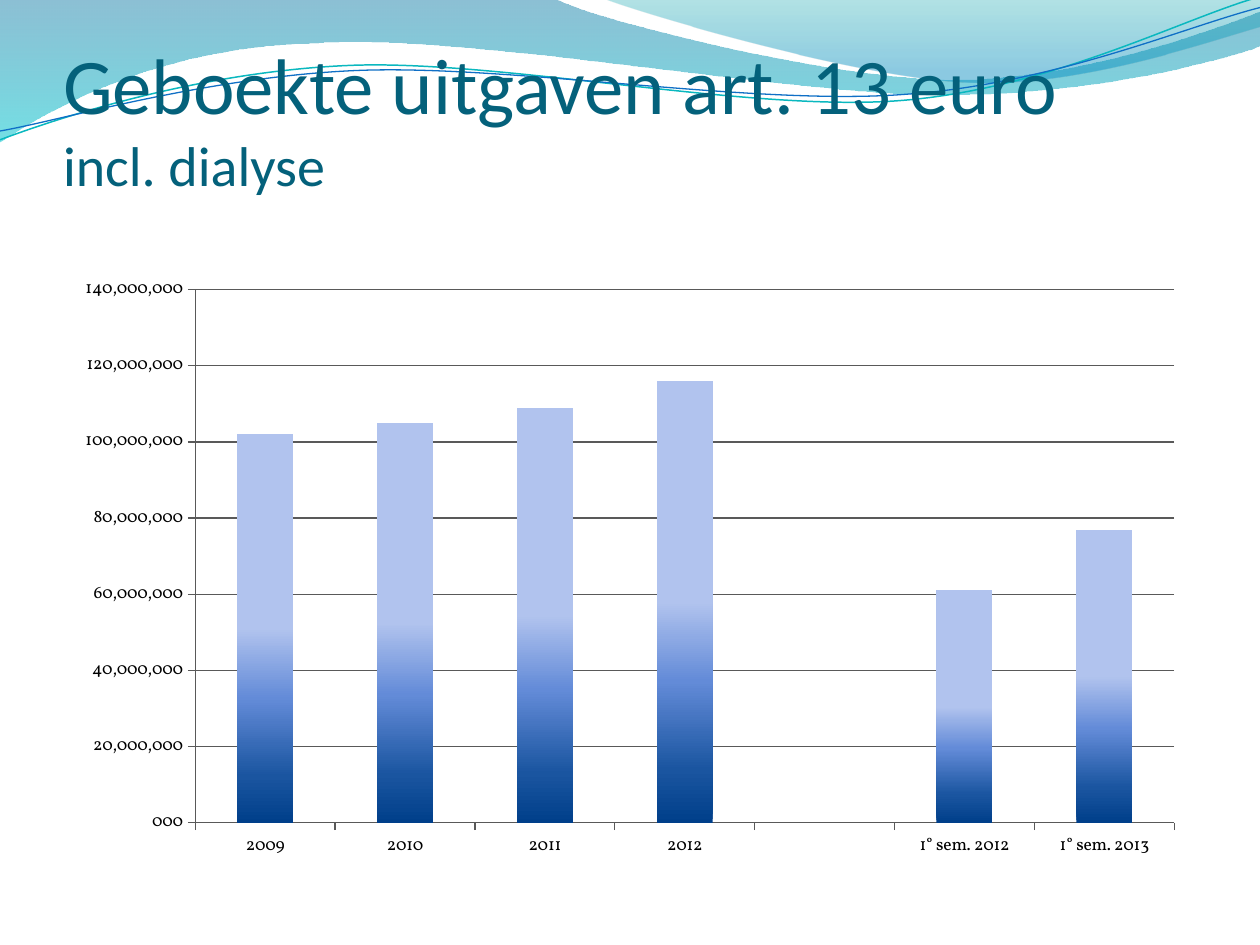
from lxml import etree
from pptx import Presentation
from pptx.chart.data import CategoryChartData
from pptx.dml.color import RGBColor
from pptx.enum.chart import XL_CHART_TYPE as ChartType, XL_TICK_MARK as Tick
from pptx.enum.text import MSO_ANCHOR as Anchor, PP_ALIGN as Align
from pptx.oxml import parse_xml
from pptx.oxml.ns import nsdecls, qn
from pptx.util import Inches, Pt

THEME = {
    "title": RGBColor.from_string("04617B"),
    "axis": RGBColor.from_string("595959"),
    "label": RGBColor.from_string("000000"),
    "title_font": "Calibri", "chart_font": "Vollkorn",
    "title_size": Pt(45), "subtitle_size": Pt(32), "label_size": Pt(10),
    # gradient stops: position %, colour, opacity %
    "broad_wave": [(0, "0074A1", 45), (100, "00C6CF", 55)],
    "right_wave": [(0, "00A1A9", 30), (80, "008BBF", 45)],
    "bar": [(0, "003F8A", 100), (12, "1A55A0", 100), (32, "638BD8", 100),
            (50, "B1C3EE", 100), (100, "B1C3EE", 100)],
    "thin_waves": [("0AB8BF", 0.85), ("0F6FC6", 0.75)],
}
UNITS = 100  # outline units per inch


def add_wave(shapes, start, segments, closed):
    """Draw a freeform; a segment is a line end (2 numbers) or a Bézier (6)."""
    builder = shapes.build_freeform(start[0] * UNITS, start[1] * UNITS,
                                    scale=Inches(1) / UNITS)
    for i, segment in enumerate(segments):
        scaled = [value * UNITS for value in segment]
        builder.add_line_segments(list(zip(scaled[::2], scaled[1::2])),
                                  close=closed and i == len(segments) - 1)
    wave = builder.convert_to_shape()
    lines = iter(list(wave._element.iter(qn("a:lnTo"))))
    for segment in segments:
        first = next(lines)
        if len(segment) == 6:
            first.tag = qn("a:cubicBezTo")
            for _ in range(2):
                line = next(lines)
                first.append(line[0])
                line.getparent().remove(line)
    wave.shadow.inherit = False
    wave.fill.background()
    return wave


def set_gradient(properties, stops, angle):
    """Replace the empty fill in the shape properties by a linear gradient."""
    stop_xml = "".join(
        f'<a:gs pos="{pos * 1000}"><a:srgbClr val="{color}">'
        f'<a:alpha val="{alpha * 1000}"/></a:srgbClr></a:gs>'
        for pos, color, alpha in stops)
    gradient = parse_xml(
        f'<a:gradFill {nsdecls("a")} rotWithShape="1"><a:gsLst>{stop_xml}</a:gsLst>'
        f'<a:lin ang="{angle * 60000}" scaled="0"/></a:gradFill>')
    properties.replace(properties.find(qn("a:noFill")), gradient)


prs = Presentation()
prs.slide_width, prs.slide_height = Inches(10), Inches(7.5)
slide = prs.slides.add_slide(prs.slide_layouts[5])
shapes = slide.shapes

# Wave decoration along the top
filled_waves = [
    ((0, 0), [(4.4, -0.01), (4.76, 0.17, 6.64, 0.63, 7.58, 0.63),
              (8.53, 0.63, 9.58, 0.26, 10, 0.09), (10.01, 0.36),
              (9.83, 0.44, 8.7, 0.76, 7.46, 0.75),
              (6.22, 0.75, 3.82, 0.28, 2.57, 0.34),
              (1.29, 0.36, 0.46, 0.83, -0.01, 1.13)], THEME["broad_wave"]),
    ((4.79, -0.01), [(5.09, 0.11, 6.82, 0.62, 7.69, 0.65),
                     (8.56, 0.69, 9.61, 0.32, 10, 0.21), (10, 0)],
     THEME["right_wave"]),
]
for start, segments, stops in filled_waves:
    wave = add_wave(shapes, start, segments, closed=True)
    wave.line.fill.background()
    set_gradient(wave._element.spPr, stops, 90)

thin_waves = [
    ((0, 1.11), [(0.48, 0.93, 1.58, 0.57, 2.77, 0.52),
                 (3.95, 0.47, 5.93, 0.89, 7.13, 0.8),
                 (8.33, 0.71, 9.38, 0.15, 9.98, -0.02)]),
    ((0, 1.04), [(0.47, 0.96, 1.64, 0.61, 2.83, 0.56),
                 (4.03, 0.51, 5.97, 0.84, 7.17, 0.75),
                 (8.36, 0.67, 9.41, 0.21, 10, 0.06)]),
]
for (start, segments), (color, width) in zip(thin_waves, THEME["thin_waves"]):
    wave = add_wave(shapes, start, segments, closed=False)
    wave.line.color.rgb = RGBColor.from_string(color)
    wave.line.width = Pt(width)

# Title, brought in front of the waves
title = shapes.title
shapes._spTree.append(title._element)
title.left, title.top = Inches(0.5), Inches(0.32)
title.width, title.height = Inches(9), Inches(1.25)
frame = title.text_frame
frame.margin_left = frame.margin_right = frame.margin_bottom = 0
frame.margin_top = Inches(0.05)
frame.vertical_anchor = Anchor.BOTTOM
heading = frame.paragraphs[0]
heading.text = "Geboekte uitgaven art. 13 euro\vincl. dialyse"
heading.alignment = Align.LEFT
for run, size in zip(heading.runs, (THEME["title_size"], THEME["subtitle_size"])):
    run.font.size = size
    run.font.name = THEME["title_font"]
    run.font.color.rgb = THEME["title"]

# Expenditure per year and per half-year
spending = CategoryChartData(number_format="###,000")
spending.categories = ["2009", "2010", "2011", "2012", "",
                       "1° sem. 2012", "1° sem. 2013"]
spending.add_series("Series 1", [102000000, 105000000, 109000000, 116000000,
                                 None, 61000000, 77000000])
chart_width, chart_height = 9, 4.8
chart = shapes.add_chart(ChartType.COLUMN_CLUSTERED, Inches(0.5), Inches(2.12),
                         Inches(chart_width), Inches(chart_height), spending).chart
chart.has_legend = chart.has_title = False
chart.font.name = THEME["chart_font"]
chart.font.size = THEME["label_size"]
chart.font.color.rgb = THEME["label"]

plot = chart.plots[0]
plot.gap_width = 150
plot.vary_by_categories = False
bars = plot.series[0]
bars.format.fill.background()
set_gradient(bars._element.spPr, THEME["bar"], 270)

years, amounts = chart.category_axis, chart.value_axis
amounts.minimum_scale, amounts.maximum_scale = 0, 140000000
amounts.major_unit = 20000000
amounts.has_major_gridlines = True
amounts.tick_labels.number_format = "###,000"
amounts.tick_labels.number_format_is_linked = False
for axis in (years, amounts):
    axis.major_tick_mark = Tick.OUTSIDE
    axis.minor_tick_mark = Tick.NONE
for part in (years, amounts, amounts.major_gridlines):
    part.format.line.color.rgb = THEME["axis"]
    part.format.line.width = Pt(0.75)

# Fixed inner plot area, as fractions of the chart
plot_area = chart._chartSpace.chart.plotArea
for old_layout in plot_area.findall(qn("c:layout")):
    plot_area.remove(old_layout)
layout = etree.Element(qn("c:layout"))
manual = etree.SubElement(layout, qn("c:manualLayout"))
for tag, value in (("layoutTarget", "inner"), ("xMode", "edge"), ("yMode", "edge"),
                   ("x", 1.05 / chart_width), ("y", 0.18 / chart_height),
                   ("w", 7.77 / chart_width), ("h", 4.23 / chart_height)):
    etree.SubElement(manual, qn(f"c:{tag}")).set("val", str(value))
plot_area.insert(0, layout)

prs.save("out.pptx")
